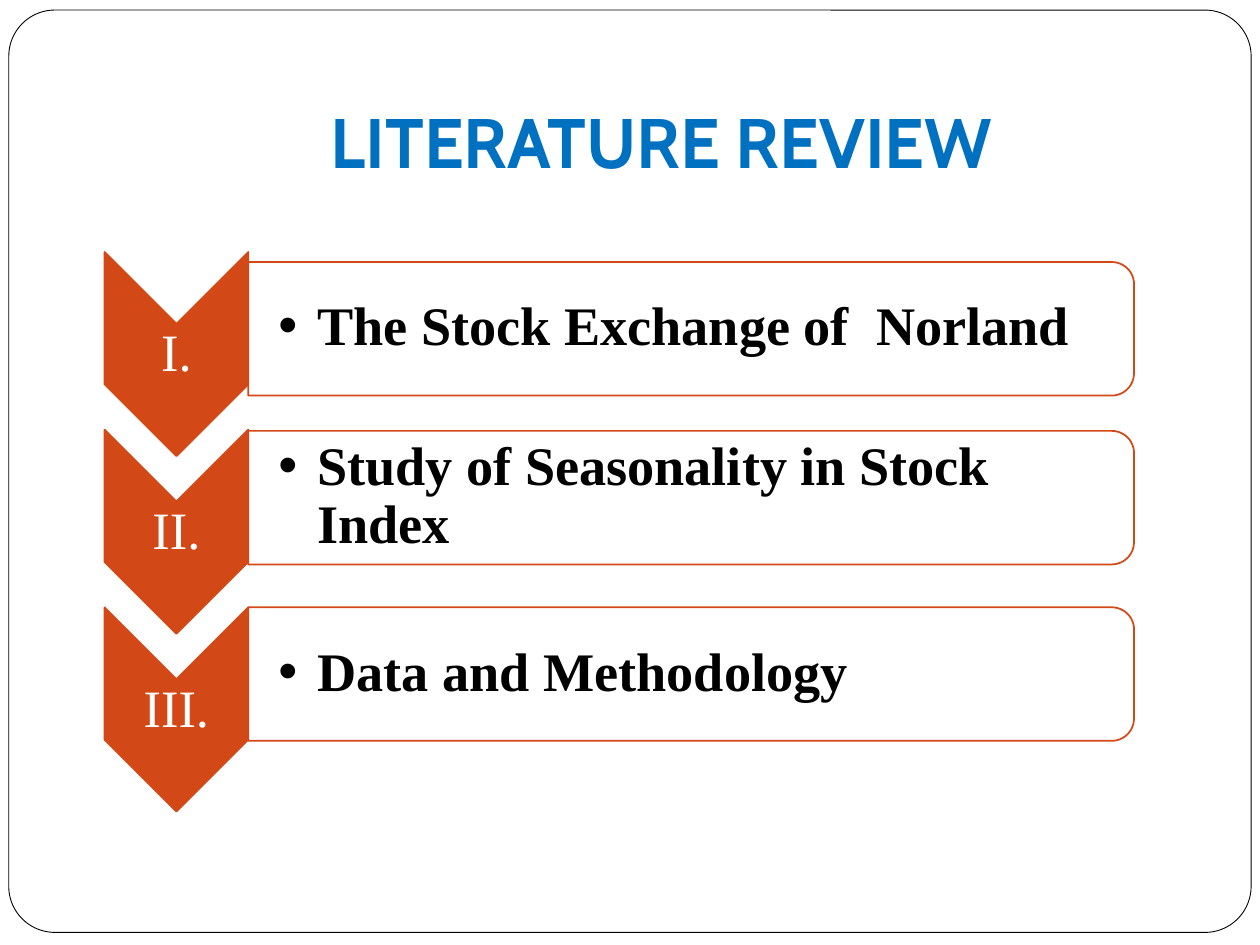
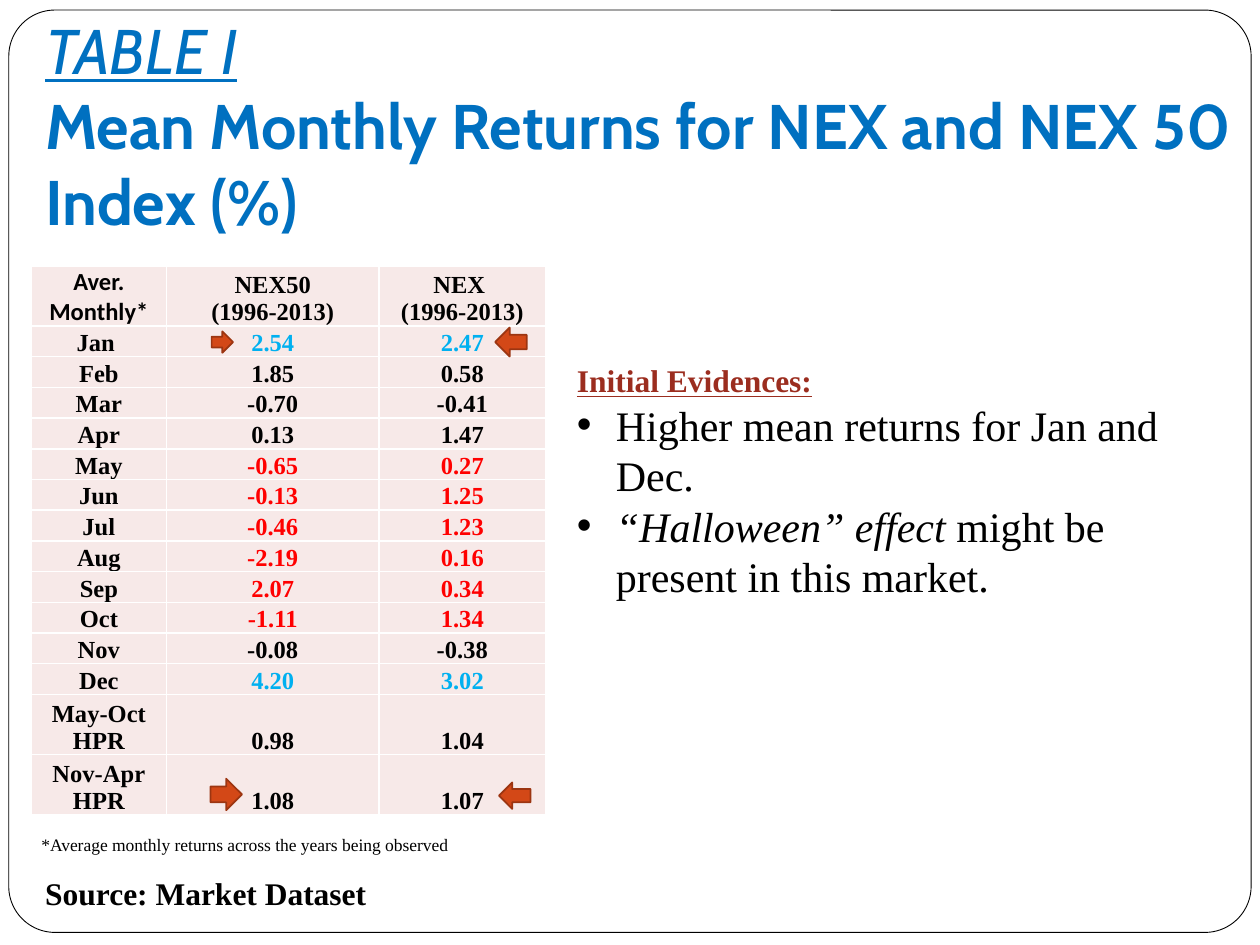
from dataclasses import dataclass

from lxml import etree
from pptx import Presentation
from pptx.dml.color import RGBColor
from pptx.enum import shapes, text
from pptx.oxml.ns import qn
from pptx.util import Inches, Pt

SHAPE, ALIGN, ANCHOR = shapes.MSO_SHAPE, text.PP_ALIGN, text.MSO_ANCHOR


@dataclass(frozen=True)
class Theme:
    serif: str = "Times New Roman"
    heading: str = "Cabin"
    label: str = "Calibri"
    white: str = "FFFFFF"
    black: str = "000000"
    blue: str = "0070C0"
    accent: str = "D34817"
    accent_dark: str = "9C3511"
    evidence: str = "9B2D1F"
    cell: str = "F7E9E8"
    high: str = "00B0F0"
    summer: str = "FF0000"
    title_size: int = 40
    long_title_size: int = 36
    step_size: int = 31
    numeral_size: int = 30
    body_size: int = 24
    note_size: int = 18
    table_size: int = 14
    footnote_size: int = 10


THEME = Theme()
DEFAULT_INSETS = (0.1, 0.05, 0.1, 0.05)
TITLE_INSETS = (0.1, 0.05, 0.1, 0.1)

STEPS = [  # numeral, topic, top of the card
    ("I.", "The Stock Exchange of  Norland", 2.08),
    ("II.", "Study of Seasonality in Stock Index", 3.42),
    ("III.", "Data and Methodology", 4.82),
]

HEADINGS = ["Aver. Monthly*", "NEX50\n(1996-2013)", "NEX \n(1996-2013)"]
RETURNS = [
    ("Jan ", "2.54", "2.47"),
    ("Feb", "1.85", "0.58"),
    ("Mar", "-0.70", "-0.41"),
    ("Apr", "0.13", "1.47"),
    ("May", "-0.65", "0.27"),
    ("Jun", "-0.13", "1.25"),
    ("Jul", "-0.46", "1.23"),
    ("Aug", "-2.19", "0.16"),
    ("Sep", "2.07", "0.34"),
    ("Oct", "-1.11", "1.34"),
    ("Nov", "-0.08", "-0.38"),
    ("Dec", "4.20", "3.02"),
    ("May-Oct\nHPR", "0.98", "1.04"),
    ("Nov-Apr\nHPR", "1.08", "1.07"),
]
HIGH_MONTHS = {"Jan ", "Dec"}
SUMMER_MONTHS = {"May", "Jun", "Jul", "Aug", "Sep", "Oct"}

ARROWS = [
    (SHAPE.RIGHT_ARROW, (1.67, 6.18, 0.25, 0.25)),
    (SHAPE.RIGHT_ARROW, (1.68, 2.63, 0.17, 0.17)),
    (SHAPE.LEFT_ARROW, (3.96, 6.21, 0.25, 0.21)),
    (SHAPE.LEFT_ARROW, (3.93, 2.6, 0.25, 0.23)),
]


def rgb(colour):
    return RGBColor.from_string(colour)


# Text
def add_run(paragraph, words, size, colour=THEME.black, font=THEME.serif,
            bold=False, italic=False, underline=False):
    """Add words to a paragraph; a newline becomes a line break."""
    for index, line in enumerate(words.split("\n")):
        if index:
            paragraph.add_line_break()
        if not line:
            continue
        run = paragraph.add_run()
        run.text = line
        run.font.size, run.font.name = Pt(size), font
        run.font.color.rgb = rgb(colour)
        run.font.bold, run.font.italic = bold, italic
        run.font.underline = underline


def add_text(slide, box, anchor=ANCHOR.TOP, insets=DEFAULT_INSETS):
    frame = slide.shapes.add_textbox(*map(Inches, box)).text_frame
    frame.word_wrap = True
    frame.vertical_anchor = anchor
    (frame.margin_left, frame.margin_top,
     frame.margin_right, frame.margin_bottom) = map(Inches, insets)
    return frame


def add_bullet(paragraph, indent=0.31):
    properties = paragraph._p.get_or_add_pPr()
    properties.set("marL", str(Inches(indent)))
    properties.set("indent", str(-Inches(indent)))
    font = etree.SubElement(properties, qn("a:buFont"))
    font.set("typeface", "Arial")
    etree.SubElement(properties, qn("a:buChar")).set("char", "•")


def add_title(slide, box, align=ALIGN.LEFT):
    title = add_text(slide, box, ANCHOR.BOTTOM, TITLE_INSETS).paragraphs[0]
    title.alignment = align
    return title


# Shapes
def add_preset(slide, preset, box, fill, line, width=1, rotation=0):
    shape = slide.shapes.add_shape(preset, *map(Inches, box))
    shape.shadow.inherit = False
    shape.rotation = rotation
    shape.fill.solid()
    shape.fill.fore_color.rgb = rgb(fill)
    shape.line.color.rgb = rgb(line)
    shape.line.width = Pt(width)
    return shape


def add_framed_slide(deck):
    slide = deck.slides.add_slide(deck.slide_layouts[6])
    frame = add_preset(slide, SHAPE.ROUNDED_RECTANGLE, (0.07, 0.08, 9.86, 7.32),
                       THEME.white, THEME.black, 0.5)
    frame.adjustments[0] = 0.05
    return slide


def add_step(slide, numeral, topic, chevron_top, card_top):
    # Numbered chevron pointing down
    add_preset(slide, SHAPE.CHEVRON, (0.59, chevron_top, 1.62, 1.14),
               THEME.accent, THEME.accent, rotation=90)
    number = add_text(slide, (0.83, chevron_top + 0.33, 1.14, 0.49),
                      ANCHOR.MIDDLE, (0.02,) * 4).paragraphs[0]
    number.alignment, number.line_spacing = ALIGN.CENTER, 0.9
    add_run(number, numeral, THEME.numeral_size, THEME.white)

    # Card, turned so that its rounded corners are on the right
    length, height = 7.03, 1.06
    shift = (length - height) / 2
    card = add_preset(slide, SHAPE.ROUND_2_SAME_RECTANGLE,
                      (1.97 + shift, card_top - shift, height, length),
                      THEME.white, THEME.accent, rotation=90)
    tint = card._element.spPr.find(qn("a:solidFill"))[0]
    etree.SubElement(tint, qn("a:alpha")).set("val", "90000")

    words = add_text(slide, (1.97, card_top + 0.05, 6.98, 0.95),
                     ANCHOR.MIDDLE, (0.24, 0.02, 0.02, 0.02)).paragraphs[0]
    words.line_spacing = 0.9
    add_bullet(words)
    add_run(words, topic, THEME.step_size, bold=True)


# Table
def fill_cell(cell, words, colour, font):
    cell.vertical_anchor = ANCHOR.BOTTOM
    cell.margin_left = cell.margin_right = cell.margin_top = Inches(0.01)
    cell.margin_bottom = 0
    paragraph = cell.text_frame.paragraphs[0]
    paragraph.alignment = ALIGN.CENTER
    add_run(paragraph, words, THEME.table_size, colour, font, bold=True)

    properties = cell._tc.get_or_add_tcPr()
    for side in ("a:lnL", "a:lnR", "a:lnT", "a:lnB"):
        border = etree.SubElement(properties, qn(side), w=str(Pt(1)))
        paint = etree.SubElement(border, qn("a:solidFill"))
        etree.SubElement(paint, qn("a:srgbClr")).set("val", THEME.white)
    cell.fill.solid()
    cell.fill.fore_color.rgb = rgb(THEME.cell)


def value_colour(period):
    if period in HIGH_MONTHS:
        return THEME.high
    return THEME.summer if period in SUMMER_MONTHS else THEME.black


def add_returns_table(slide):
    rows = [HEADINGS, *RETURNS]
    table = slide.shapes.add_table(
        len(rows), len(HEADINGS), *map(Inches, (0.25, 2.11, 4.08, 4.36))).table
    table.first_row = table.horz_banding = False
    for column, width in zip(table.columns, (1.07, 1.69, 1.32)):
        column.width = Inches(width)
    for r, row in enumerate(rows):
        two_lines = r == 0 or "\n" in row[0]
        table.rows[r].height = Inches(0.47 if two_lines else 0.24)
        for c, words in enumerate(row):
            colour = value_colour(row[0]) if c else THEME.black
            font = THEME.label if r == c == 0 else THEME.serif
            fill_cell(table.cell(r, c), words, colour, font)


def add_evidence(slide):
    frame = add_text(slide, (4.48, 2.82, 4.83, 3.33))
    heading = frame.paragraphs[0]
    add_run(heading, "Initial Evidences:", THEME.note_size, THEME.evidence,
            bold=True, underline=True)
    months = frame.add_paragraph()
    add_run(months, "Higher mean returns for Jan and Dec.", THEME.body_size)
    halloween = frame.add_paragraph()
    add_run(halloween, "“Halloween” effect ", THEME.body_size, italic=True)
    add_run(halloween, "might be present in this market.", THEME.body_size)
    for finding in (months, halloween):
        add_bullet(finding)


# Slides
def build_literature_review(deck):
    slide = add_framed_slide(deck)
    title = add_title(slide, (1, 0.3, 8.5, 1.25), ALIGN.CENTER)
    add_run(title, "LITERATURE REVIEW", THEME.title_size, THEME.blue,
            THEME.heading, bold=True)
    for index, (numeral, topic, card_top) in enumerate(STEPS):
        add_step(slide, numeral, topic, 2.24 + 1.41 * index, card_top)


def build_monthly_returns(deck):
    slide = add_framed_slide(deck)
    title = add_title(slide, (0.26, 0.74, 10.33, 1.25))
    style = (THEME.long_title_size, THEME.blue, THEME.heading)
    add_run(title, "TABLE I\n", *style, italic=True, underline=True)
    add_run(title, "Mean Monthly Returns for NEX and NEX 50 Index (%)",
            *style, bold=True)

    source = add_text(slide, (0.26, 6.89, 3.92, 0.4)).paragraphs[0]
    add_run(source, "Source: Market Dataset", THEME.note_size, bold=True)
    add_returns_table(slide)
    for preset, box in ARROWS:
        add_preset(slide, preset, box, THEME.accent, THEME.accent_dark)
    add_evidence(slide)
    footnote = add_text(slide, (0.23, 6.57, 8.5, 0.27)).paragraphs[0]
    add_run(footnote, "*Average monthly returns across the years being observed",
            THEME.footnote_size)


def main():
    deck = Presentation()
    deck.slide_width, deck.slide_height = Inches(10), Inches(7.5)
    build_literature_review(deck)
    build_monthly_returns(deck)
    deck.save("out.pptx")


if __name__ == "__main__":
    main()
